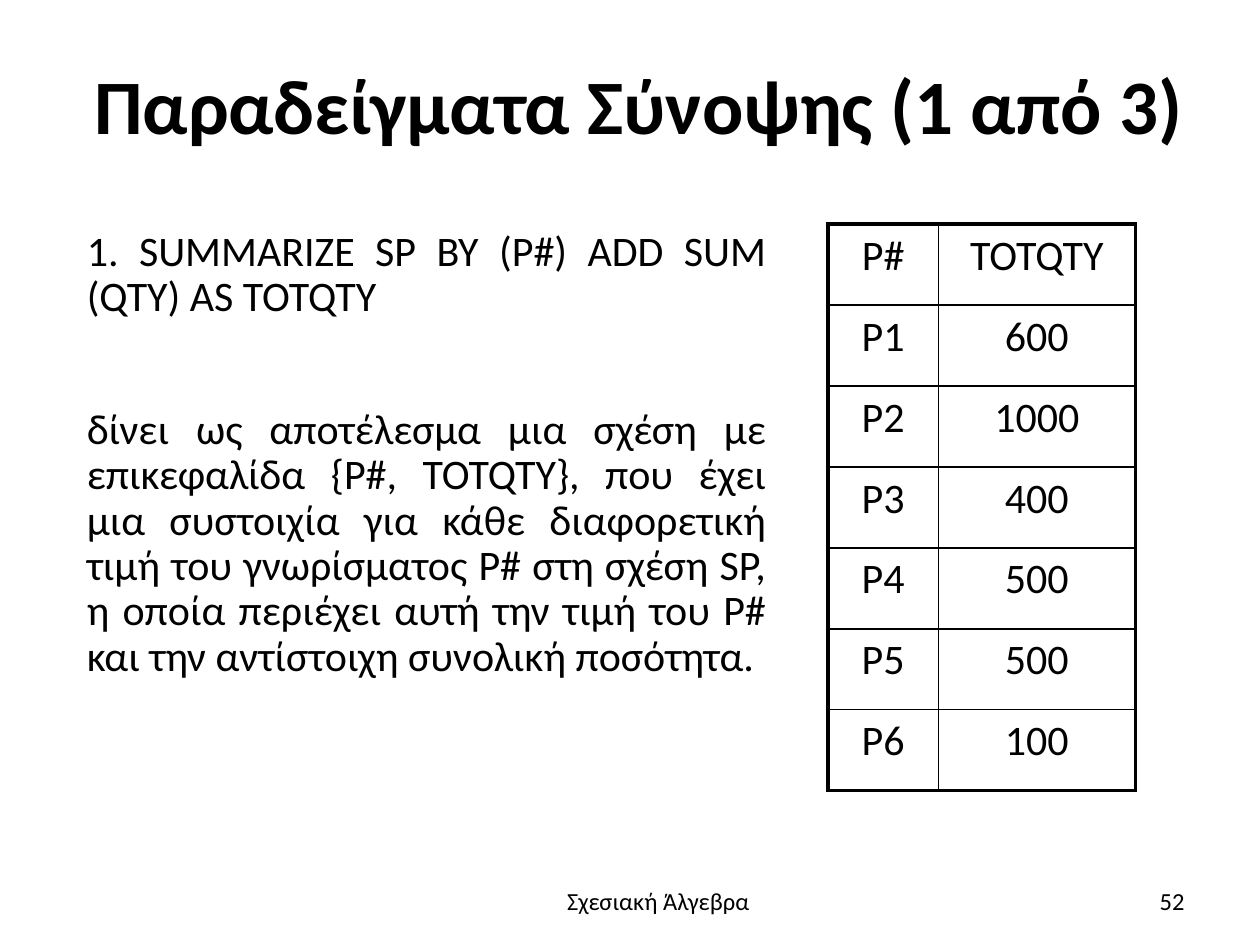
from dataclasses import dataclass

from lxml.etree import SubElement
from pptx import Presentation
from pptx.dml.color import RGBColor
from pptx.enum.text import MSO_ANCHOR as Anchor, PP_ALIGN as Align
from pptx.oxml.ns import qn
from pptx.util import Inches, Pt

WIDTH, HEIGHT = 10, 7.5
FONT = "Calibri"
COLORS = {"text": "000000", "border": "000000", "background": "FFFFFF"}
THICK, THIN = 2.25, 1


@dataclass
class Box:
    """Left, top, width and height as shares of the slide's size."""
    left: float
    top: float
    width: float
    height: float

    def emu(self) -> list[int]:
        return [Inches(self.left * WIDTH), Inches(self.top * HEIGHT),
                Inches(self.width * WIDTH), Inches(self.height * HEIGHT)]


@dataclass
class TextBlock:
    box: Box
    paragraphs: list[str]
    size: float
    align: Align
    anchor: Anchor = Anchor.TOP
    line_spacing: float = 1.0
    gap: float = 0


def format_paragraph(p, size: float, align: Align, bold: bool = False) -> None:
    p.alignment = align
    for r in p.runs:
        r.font.name = FONT
        r.font.size = Pt(size)
        r.font.bold = bold
        r.font.color.rgb = RGBColor.from_string(COLORS["text"])


def add_text(s, block: TextBlock) -> None:
    tf = s.shapes.add_textbox(*block.box.emu()).text_frame
    tf.word_wrap = True
    tf.vertical_anchor = block.anchor
    for i, text in enumerate(block.paragraphs):
        p = tf.add_paragraph() if i else tf.paragraphs[0]
        p.text = text
        p.line_spacing = block.line_spacing
        if i:
            p.space_before = Pt(block.gap)
        format_paragraph(p, block.size, block.align)


def set_borders(cell, widths: dict[str, float]) -> None:
    tc_pr = cell._tc.get_or_add_tcPr()
    for position, (side, width) in enumerate(widths.items()):
        ln = tc_pr.makeelement(qn(f"a:ln{side}"), {"w": str(Pt(width))})
        fill = SubElement(ln, qn("a:solidFill"))
        SubElement(fill, qn("a:srgbClr"), val=COLORS["border"])
        tc_pr.insert(position, ln)


def add_grid(s, box: Box, rows: list[tuple[str, str]],
             shares: list[float], size: float) -> None:
    n_rows, n_cols = len(rows), len(shares)
    left, top, width, height = box.emu()
    table = s.shapes.add_table(n_rows, n_cols, left, top, width, height).table
    table.first_row = table.horz_banding = False
    for column, share in zip(table.columns, shares):
        column.width = int(width * share)
    for i, values in enumerate(rows):
        table.rows[i].height = height // n_rows
        for j, value in enumerate(values):
            cell = table.cell(i, j)
            cell.text = value
            cell.fill.background()
            format_paragraph(cell.text_frame.paragraphs[0], size, Align.CENTER)
            # Thick outer frame, thin inner lines
            outer = {"L": j == 0, "R": j == n_cols - 1,
                     "T": i == 0, "B": i == n_rows - 1}
            set_borders(cell, {side: THICK if edge else THIN
                               for side, edge in outer.items()})


BODY = TextBlock(
    Box(0.059, 0.237, 0.559, 0.493),
    ["1. SUMMARIZE SP BY (P#) ADD SUM (QTY) AS TOTQTY",
     "δίνει ως αποτέλεσμα μια σχέση με επικεφαλίδα {P#, TOTQTY}, που έχει "
     "μια συστοιχία για κάθε διαφορετική τιμή του γνωρίσματος P# στη σχέση "
     "SP, η οποία περιέχει αυτή την τιμή του P# και την αντίστοιχη συνολική "
     "ποσότητα."],
    24, Align.JUSTIFY, line_spacing=0.9, gap=50)
FOOTER = TextBlock(Box(0.348, 0.931, 0.349, 0.073), ["Σχεσιακή Άλγεβρα"],
                   14, Align.CENTER)
NUMBER = TextBlock(Box(0.717, 0.927, 0.233, 0.053), ["52"],
                   14, Align.RIGHT, Anchor.MIDDLE)
TOTALS = [("P#", "TOTQTY"), ("P1", "600"), ("P2", "1000"), ("P3", "400"),
          ("P4", "500"), ("P5", "500"), ("P6", "100")]


def main() -> None:
    prs = Presentation()
    prs.slide_width, prs.slide_height = Inches(WIDTH), Inches(HEIGHT)
    s = prs.slides.add_slide(prs.slide_layouts[5])
    s.background.fill.solid()
    s.background.fill.fore_color.rgb = RGBColor.from_string(COLORS["background"])

    # Title
    title = s.shapes.title
    title.left, title.top, title.width, title.height = Box(
        0.051, 0.012, 0.913, 0.195).emu()
    tf = title.text_frame
    tf.text = "Παραδείγματα Σύνοψης (1 από 3)"
    tf.vertical_anchor = Anchor.MIDDLE
    format_paragraph(tf.paragraphs[0], 44, Align.CENTER, bold=True)

    # Example, its result, and the footer line
    add_text(s, BODY)
    add_grid(s, Box(0.657, 0.237, 0.244, 0.6), TOTALS, [0.36, 0.64], 24)
    for block in (FOOTER, NUMBER):
        add_text(s, block)

    prs.save("out.pptx")


if __name__ == "__main__":
    main()
